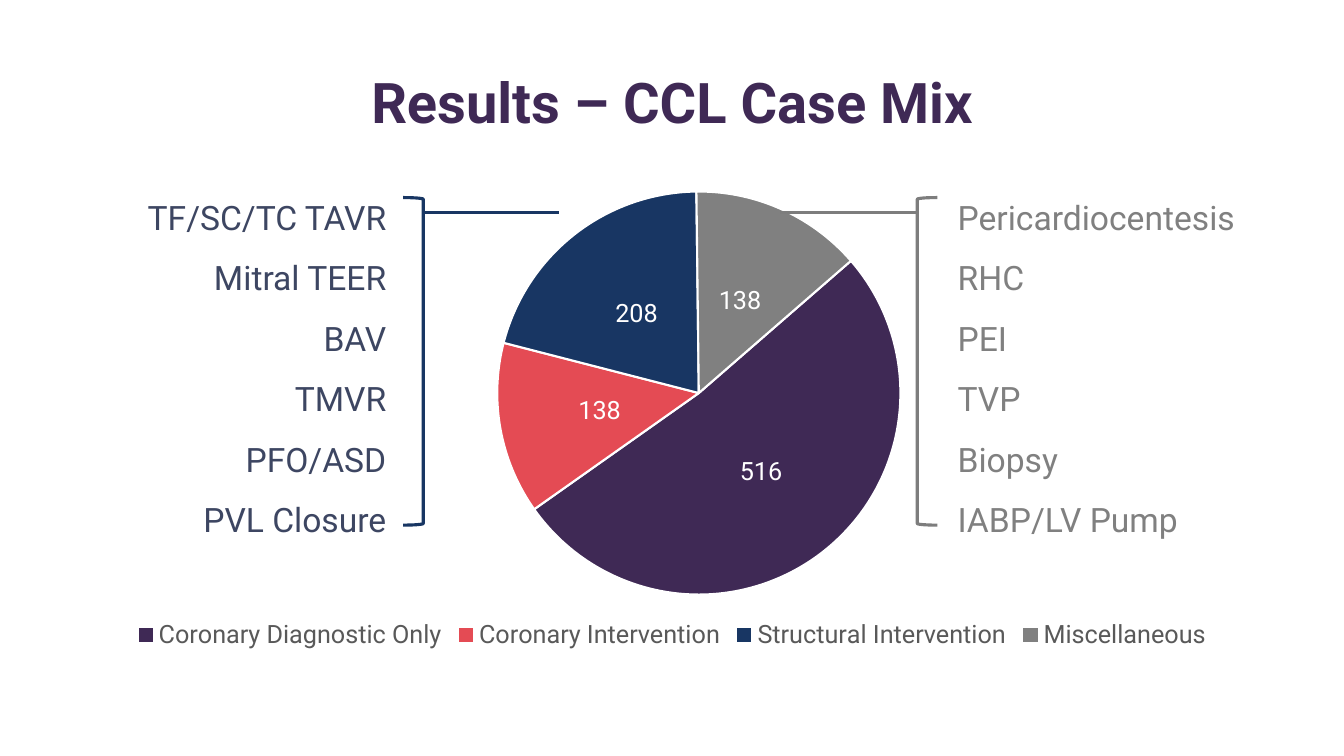
from lxml.etree import SubElement
from pptx import Presentation
from pptx.chart.data import CategoryChartData
from pptx.dml.color import RGBColor
from pptx.enum.chart import XL_CHART_TYPE, XL_LABEL_POSITION, XL_LEGEND_POSITION
from pptx.enum.shapes import MSO_CONNECTOR, MSO_SHAPE
from pptx.enum.text import MSO_ANCHOR, MSO_AUTO_SIZE, PP_ALIGN
from pptx.oxml import parse_xml
from pptx.oxml.ns import nsdecls, qn
from pptx.util import Inches, Pt

# Content
TITLE = "Results – CCL Case Mix"
CASES = [
    ("Coronary Diagnostic Only", 516, "plum"),
    ("Coronary Intervention", 138, "red"),
    ("Structural Intervention", 208, "navy"),
    ("Miscellaneous", 138, "gray"),
]
# Each side: list column, bracket column, lead columns, bracket shape, colours
SIDES = [
    dict(items=["TF/SC/TC TAVR", "Mitral TEER", "BAV", "TMVR", "PFO/ASD",
                "PVL Closure"],
         col=1, edge=12, lead=(12.6, 16.65), kind=MSO_SHAPE.RIGHT_BRACKET,
         align=PP_ALIGN.RIGHT, ink="slate", rule="navy"),
    dict(items=["Pericardiocentesis", "RHC", "PEI", "TVP", "Biopsy",
                "IABP/LV Pump"],
         col=27, edge=27.3, lead=(23.22, 27.27), kind=MSO_SHAPE.LEFT_BRACKET,
         align=PP_ALIGN.LEFT, ink="gray", rule="steel"),
]
THEME = dict(
    font="Roboto", title=40, list=24, label=18, line=2.25, gap=1.5,
    plum="3F2955", red="E44B54", navy="183663", gray="808080",
    slate="3D4662", steel="7D7D7D", text="595959", white="FFFFFF",
)

# Grid of 40 columns by 30 rows
WIDE, HIGH = Inches(13.33), Inches(7.5)
COLS, ROWS = 40, 30
BODY = (6, 20)          # first row and row count of chart and lists
BRACE = (7.84, 13)      # the same for the brackets
LEAD = 8.44             # row of the lead lines
PIE = dict(x=0.37, y=0.08, w=0.3, h=0.8)  # shares of the chart frame


def span(col, row, cols, rows):
    return [int(WIDE * col / COLS), int(HIGH * row / ROWS),
            int(WIDE * cols / COLS), int(HIGH * rows / ROWS)]


def put(item, **vals):
    for name, val in vals.items():
        setattr(item, name, val)


def place(shape, *cells):
    put(shape, **dict(zip(("left", "top", "width", "height"), span(*cells))))


def hue(name):
    return RGBColor.from_string(THEME[name])


def style(font, size, color, bold=False):
    put(font, name=THEME["font"], size=Pt(THEME[size]), bold=bold)
    font.color.rgb = hue(color)


def stroke(line, color, width):
    line.color.rgb = hue(color)
    line.width = Pt(width)


def add_title(slide):
    title = slide.shapes.title
    place(title, 0, 2, COLS, 4)
    frame = title.text_frame
    put(frame, text=TITLE, word_wrap=True, vertical_anchor=MSO_ANCHOR.MIDDLE,
        auto_size=MSO_AUTO_SIZE.NONE)
    para = frame.paragraphs[0]
    para.alignment = PP_ALIGN.CENTER
    style(para.runs[0].font, "title", "plum", True)


def add_list(holder, side):
    place(holder, side["col"], BODY[0], 12, BODY[1])
    frame = holder.text_frame
    put(frame, text="\n".join(side["items"]), word_wrap=True,
        auto_size=MSO_AUTO_SIZE.NONE, vertical_anchor=MSO_ANCHOR.TOP,
        margin_left=Inches(0.5), margin_right=Inches(0.5),
        margin_top=Inches(0.25), margin_bottom=Inches(0.5))
    for para in frame.paragraphs:
        props = para._p.get_or_add_pPr()
        props.set("marL", "0")
        props.set("indent", "0")
        SubElement(props, qn("a:buNone"))
        put(para, alignment=side["align"], line_spacing=THEME["gap"],
            space_before=Pt(0), space_after=Pt(0))
        style(para.runs[0].font, "list", side["ink"])


def add_brace(slide, side):
    brace = slide.shapes.add_shape(
        side["kind"], *span(side["edge"], BRACE[0], 0.6, BRACE[1]))
    brace.shadow.inherit = False
    brace.fill.background()
    start, end = side["lead"]
    x, y, w, _ = span(start, LEAD, end - start, 0)
    lead = slide.shapes.add_connector(MSO_CONNECTOR.STRAIGHT, x, y, x + w, y)
    SubElement(lead._element.spPr, qn("a:effectLst"))
    for shape in (brace, lead):
        stroke(shape.line, side["rule"], THEME["line"])


def add_pie(slide):
    names, counts, tints = zip(*CASES)
    data = CategoryChartData()
    data.categories = names
    data.add_series("Series 1", counts)
    frame = slide.shapes.add_chart(
        XL_CHART_TYPE.PIE, *span(0, BODY[0], COLS, BODY[1]), data)
    slide.shapes._spTree.insert(2, frame._element)  # behind the lists
    chart = frame.chart
    put(chart, has_title=False, has_legend=True)
    style(chart.font, "label", "text")
    put(chart.legend, position=XL_LEGEND_POSITION.BOTTOM,
        include_in_layout=False)
    style(chart.legend.font, "label", "text")

    # Slices and their values
    plot = chart.plots[0]
    plot.vary_by_categories = True
    series = plot.series[0]
    for i, tint in enumerate(tints):
        form = series.points[i].format
        form.fill.solid()
        form.fill.fore_color.rgb = hue(tint)
        stroke(form.line, "white", 1.5)
    labels = series.data_labels
    put(labels, show_value=True, show_percentage=False,
        position=XL_LABEL_POSITION.CENTER)
    style(labels.font, "label", "white")

    # Start angle and plot place
    pie = plot._element
    turn = pie.find(qn("c:firstSliceAng"))
    if turn is None:
        turn = SubElement(pie, qn("c:firstSliceAng"))
    turn.set("val", "49")
    area = pie.getparent()
    old = area.find(qn("c:layout"))
    if old is not None:
        area.remove(old)
    modes = '<c:xMode val="edge"/><c:yMode val="edge"/>'
    sizes = "".join(f'<c:{k} val="{v}"/>' for k, v in PIE.items())
    area.insert(0, parse_xml(
        f'<c:layout {nsdecls("c")}><c:manualLayout>'
        f'<c:layoutTarget val="inner"/>{modes}{sizes}'
        '</c:manualLayout></c:layout>'))


def main():
    deck = Presentation()
    put(deck, slide_width=WIDE, slide_height=HIGH)
    slide = deck.slides.add_slide(deck.slide_layouts[3])
    add_title(slide)
    for i, side in enumerate(SIDES, 1):
        add_list(slide.placeholders[i], side)
        add_brace(slide, side)
    add_pie(slide)
    deck.save("out.pptx")


if __name__ == "__main__":
    main()
